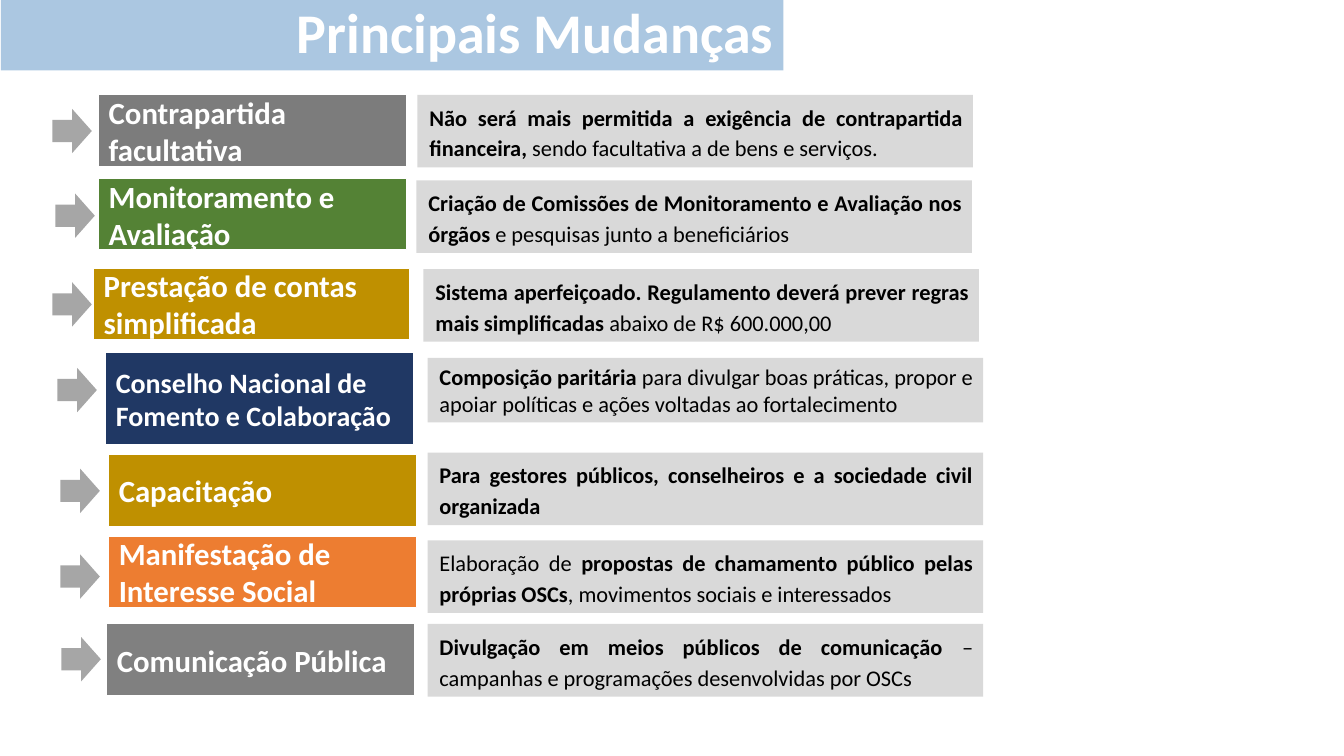
from dataclasses import dataclass

from lxml.etree import SubElement
from pptx import Presentation
from pptx.dml.color import RGBColor
from pptx.enum.shapes import MSO_SHAPE
from pptx.enum.text import MSO_ANCHOR, PP_ALIGN
from pptx.oxml.ns import qn
from pptx.util import Inches, Pt

COLORS = {
    "white": "FFFFFF", "black": "000000", "title": "2E75B6",
    "arrow": "A6A6A6", "panel": "D9D9D9", "iron": "7C7C7C",
    "green": "548235", "gold": "BF9000", "navy": "203864",
    "orange": "ED7D31", "gray": "808080",
}


@dataclass
class Change:
    """One change: arrow, coloured label and description."""
    label: str
    color: str
    arrow_at: tuple
    label_at: tuple
    panel_at: tuple
    runs: list
    label_size: tuple = (3.05, 0.71)
    panel_height: float = 0.72
    font_size: int = 22
    spacing: float = 1.15


CHANGES = [
    Change("Contrapartida facultativa", "iron", (0.52, 1.08), (0.98, 0.94), (4.14, 0.94),
           [("Não será mais permitida a exigência de contrapartida financeira, ", True),
            ("sendo facultativa a de bens e serviços.", False)]),
    Change("Monitoramento e Avaliação", "green", (0.55, 1.92), (0.98, 1.77), (4.13, 1.79),
           [("Criação de Comissões de Monitoramento e Avaliação nos órgãos ", True),
            ("e pesquisas junto a beneficiários", False)]),
    Change("Prestação de contas simplificada", "gold", (0.52, 2.8), (0.93, 2.66), (4.2, 2.67),
           [("Sistema aperfeiçoado. Regulamento deverá prever regras mais simplificadas ", True),
            ("abaixo de R$ 600.000,00", False)], label_size=(3.13, 0.71)),
    Change("Conselho Nacional de Fomento e Colaboração", "navy",
           (0.57, 3.65), (1.05, 3.5), (4.24, 3.55),
           [("Composição paritária ", True),
            ("para divulgar boas práticas, propor e apoiar políticas e ações "
             "voltadas ao fortalecimento", False)],
           label_size=(3.05, 0.91), panel_height=0.64, font_size=20, spacing=1.0),
    Change("Capacitação", "gold", (0.6, 4.65), (1.08, 4.51), (4.24, 4.49),
           [("Para gestores públicos, conselheiros e a sociedade civil organizada", True)]),
    Change("Manifestação de Interesse Social", "orange", (0.6, 5.5), (1.08, 5.32), (4.24, 5.36),
           [("Elaboração de ", False),
            ("propostas de chamamento público pelas próprias OSCs", True),
            (", movimentos sociais e interessados", False)]),
    Change("Comunicação Pública", "gray", (0.61, 6.32), (1.06, 6.19), (4.24, 6.19),
           [("Divulgação em meios públicos de comunicação ", True),
            ("– campanhas e programações desenvolvidas por OSCs", False)]),
]


def rgb(name):
    """Return the named colour."""
    return RGBColor.from_string(COLORS[name])


def add_block(slide, kind, at, size, fill, line=None):
    """Add a filled preset shape without shadow."""
    sp = slide.shapes.add_shape(kind, *map(Inches, (*at, *size)))
    sp.shadow.inherit = False
    sp.fill.solid()
    sp.fill.fore_color.rgb = rgb(fill)
    if line:
        sp.line.color.rgb = rgb(line)
        sp.line.width = Pt(0.75)
    else:
        sp.line.fill.background()
    return sp


def write_text(sp, runs, size, color, align, spacing=1.0, anchor=MSO_ANCHOR.MIDDLE):
    """Write one paragraph of (text, bold) runs and return it."""
    tf = sp.text_frame
    tf.word_wrap = True
    tf.vertical_anchor = anchor
    p = tf.paragraphs[0]
    p.alignment = align
    p.line_spacing = spacing
    for text, bold in runs:
        r = p.add_run()
        r.text = text
        r.font.name = "Calibri"
        r.font.size = Pt(size)
        r.font.bold = bold
        r.font.color.rgb = rgb(color)
    return p


def add_title(slide, text):
    """Add the translucent title band."""
    sp = add_block(slide, MSO_SHAPE.RECTANGLE, (0.01, 0), (7.76, 0.7), "title")
    srgb = sp.fill._xPr.find(qn("a:solidFill")).find(qn("a:srgbClr"))
    SubElement(srgb, qn("a:alpha"), val="40000")
    write_text(sp, [(text, True)], 40, "white", PP_ALIGN.RIGHT, 0.9)


def add_label(slide, change):
    """Add the coloured label of a change."""
    sp = add_block(slide, MSO_SHAPE.RECTANGLE, change.label_at, change.label_size,
                   change.color, "white")
    write_text(sp, [(change.label, True)], change.font_size, "white", PP_ALIGN.LEFT)


def add_panel(slide, change):
    """Add the justified description of a change."""
    sp = add_block(slide, MSO_SHAPE.RECTANGLE, change.panel_at,
                   (5.51, change.panel_height), "panel")
    p = write_text(sp, change.runs, 16, "black", PP_ALIGN.JUSTIFY,
                   change.spacing, MSO_ANCHOR.TOP)
    p._p.get_or_add_pPr().set("marL", str(Inches(0.02)))


def main():
    """Build and save the slide."""
    prs = Presentation()
    prs.slide_width, prs.slide_height = Inches(13.33), Inches(7.5)
    slide = prs.slides.add_slide(prs.slide_layouts[6])
    for change in CHANGES:
        add_block(slide, MSO_SHAPE.RIGHT_ARROW, change.arrow_at, (0.39, 0.44), "arrow")
        add_label(slide, change)
        add_panel(slide, change)
    add_title(slide, "Principais Mudanças")
    prs.save("out.pptx")


if __name__ == "__main__":
    main()
